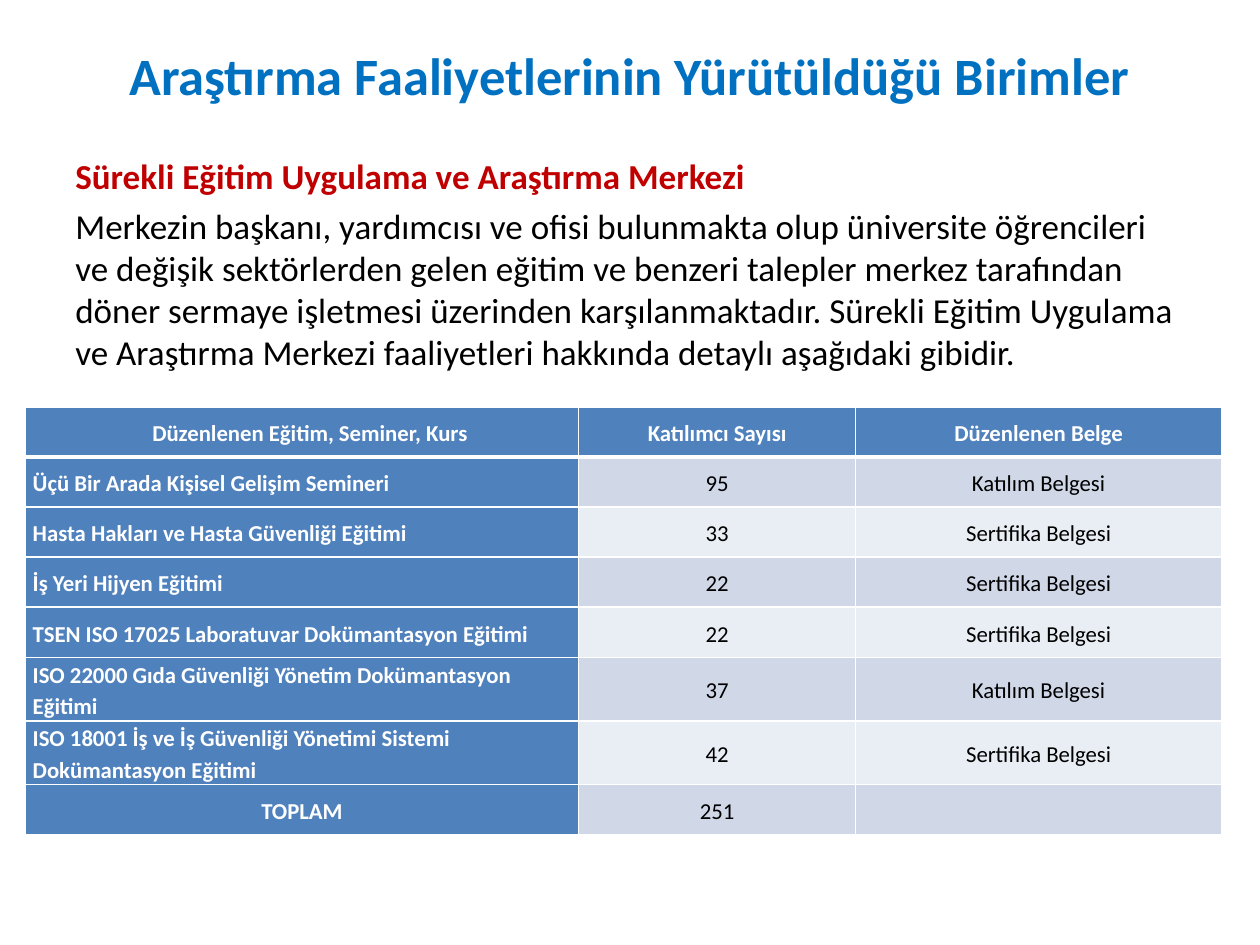
from pptx import Presentation, util as u
from pptx.dml.color import RGBColor
from pptx.enum import text as t
from pptx.oxml import parse_xml
from pptx.oxml.ns import nsdecls

Cm, Pt = u.Cm, u.Pt

# Content
TITLE = "Araştırma Faaliyetlerinin Yürütüldüğü Birimler"
HEAD = "Sürekli Eğitim Uygulama ve Araştırma Merkezi"
BODY = (
    "Merkezin başkanı, yardımcısı ve ofisi bulunmakta olup üniversite "
    "öğrencileri ve değişik sektörlerden gelen eğitim ve benzeri talepler "
    "merkez tarafından döner sermaye işletmesi üzerinden karşılanmaktadır. "
    "Sürekli Eğitim Uygulama ve Araştırma Merkezi faaliyetleri hakkında "
    "detaylı aşağıdaki gibidir."
)
ROWS = [
    ("Düzenlenen Eğitim, Seminer, Kurs", "Katılımcı Sayısı", "Düzenlenen Belge"),
    ("Üçü Bir Arada Kişisel Gelişim Semineri", "95", "Katılım Belgesi"),
    ("Hasta Hakları ve Hasta Güvenliği Eğitimi", "33", "Sertifika Belgesi"),
    ("İş Yeri Hijyen Eğitimi", "22", "Sertifika Belgesi"),
    ("TSEN ISO 17025 Laboratuvar Dokümantasyon Eğitimi", "22", "Sertifika Belgesi"),
    ("ISO 22000 Gıda Güvenliği Yönetim Dokümantasyon Eğitimi", "37",
     "Katılım Belgesi"),
    ("ISO 18001 İş ve İş Güvenliği Yönetimi Sistemi Dokümantasyon Eğitimi", "42",
     "Sertifika Belgesi"),
    ("TOPLAM", "251", ""),
]
WIDTHS = (11.15, 5.59, 7.37)
LOW, TALL = 1.01, 1.28
LONG = 50  # names longer than this take two lines

THEME = {
    "font": "Calibri",
    "title": (30, "0070C0", True),
    "head": (20, "C00000", True),
    "body": (20, "000000", False),
    "label": (13, "FFFFFF", True),
    "value": (13, "000000", False),
    "main": "4F81BD",
    "bands": ("E9EDF4", "D0D8E8"),
    "rule": "FFFFFF",
}


def style(para, role):
    size, color, bold = THEME[role]
    for run in para.runs:
        font = run.font
        font.name, font.size, font.bold = THEME["font"], Pt(size), bold
        font.color.rgb = RGBColor.from_string(color)


def add_text(slide, box, items, align, anchor):
    frame = slide.shapes.add_textbox(*map(Cm, box)).text_frame
    frame.word_wrap = True
    frame.vertical_anchor = anchor
    frame.text = "\n".join(words for words, _ in items)
    for para, (_, role) in zip(frame.paragraphs, items):
        para.alignment = align
        style(para, role)
    return frame


def add_rules(cell, row):
    props = cell._tc.get_or_add_tcPr()
    thick = {"T": 3 if row == 1 else 1, "B": 3 if row == 0 else 1}
    for side in "LRTB":
        props.append(parse_xml(
            f'<a:ln{side} {nsdecls("a")} w="{Pt(thick.get(side, 1))}">'
            f'<a:solidFill><a:srgbClr val="{THEME["rule"]}"/></a:solidFill>'
            f'</a:ln{side}>'))


def fill_cell(cell, words, row, col):
    dark = row == 0 or col == 0
    add_rules(cell, row)
    cell.fill.solid()
    cell.fill.fore_color.rgb = RGBColor.from_string(
        THEME["main"] if dark else THEME["bands"][row % 2])
    cell.margin_left = cell.margin_right = Cm(0.15)
    cell.margin_top = cell.margin_bottom = 0
    cell.vertical_anchor = t.MSO_ANCHOR.MIDDLE
    cell.text = words
    para = cell.text_frame.paragraphs[0]
    para.line_spacing = 1.15
    left = col == 0 and row < len(ROWS) - 1
    para.alignment = t.PP_ALIGN.LEFT if left else t.PP_ALIGN.CENTER
    if row == col == 0:
        para._p.get_or_add_pPr().set("marL", str(Cm(2.41)))
    style(para, "label" if dark else "value")


def main():
    deck = Presentation()
    deck.slide_width, deck.slide_height = Cm(25.4), Cm(19.05)
    slide = deck.slides.add_slide(deck.slide_layouts[6])

    # Title and introduction
    add_text(slide, (1.27, -0.08, 22.86, 3.18), [(TITLE, "title")],
             t.PP_ALIGN.CENTER, t.MSO_ANCHOR.MIDDLE)
    intro = add_text(slide, (1.27, 3, 22.83, 4.93),
                     [(HEAD, "head"), (BODY, "body")],
                     t.PP_ALIGN.LEFT, t.MSO_ANCHOR.TOP)
    for para in intro.paragraphs:
        para.space_before = Pt(4)

    # Table of courses
    highs = [TALL if len(row[0]) > LONG else LOW for row in ROWS]
    box = (0.51, 8.2, sum(WIDTHS), sum(highs))
    table = slide.shapes.add_table(len(ROWS), len(WIDTHS), *map(Cm, box)).table
    for col, wide in zip(table.columns, WIDTHS):
        col.width = Cm(wide)
    for line, high in zip(table.rows, highs):
        line.height = Cm(high)
    for r, row in enumerate(ROWS):
        for c, words in enumerate(row):
            fill_cell(table.cell(r, c), words, r, c)

    deck.save("out.pptx")


if __name__ == "__main__":
    main()
